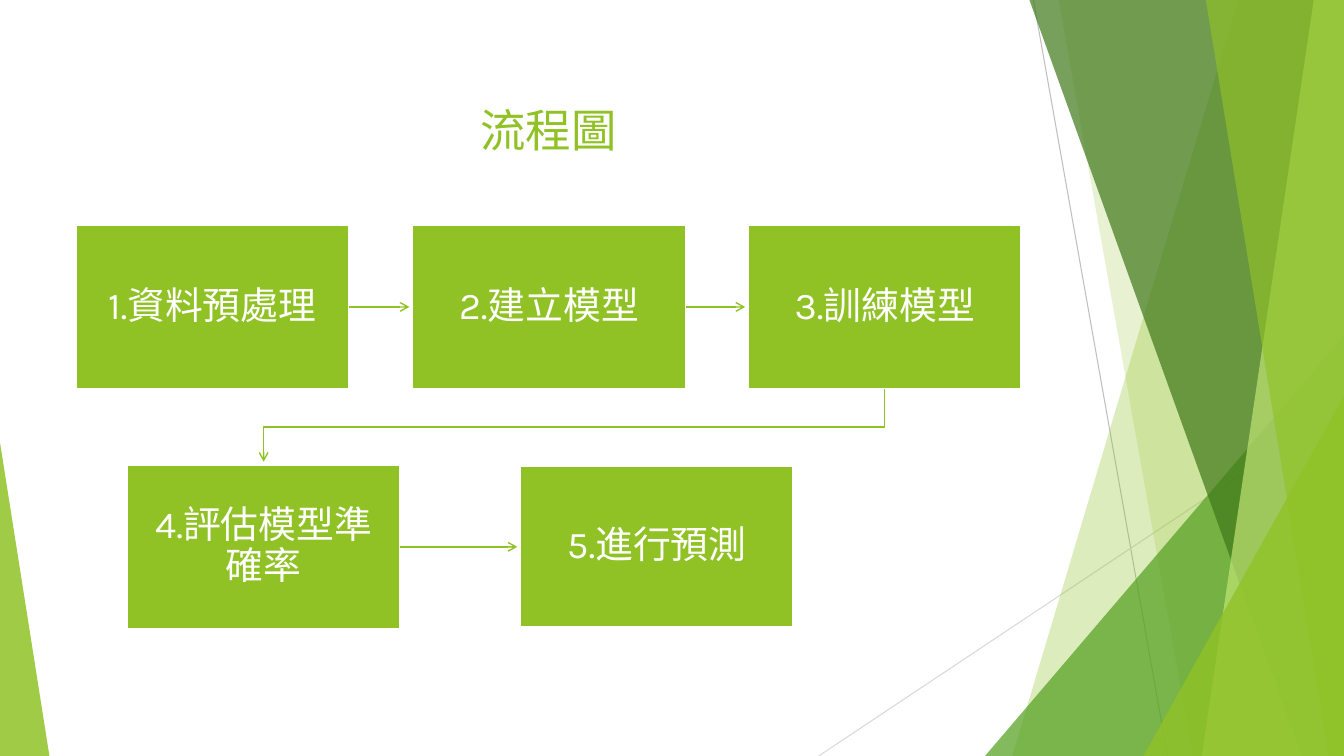
from lxml import etree
from pptx import Presentation
from pptx.dml.color import RGBColor
from pptx.enum.shapes import MSO_CONNECTOR, MSO_SHAPE
from pptx.enum.text import MSO_ANCHOR, PP_ALIGN
from pptx.oxml.ns import qn
from pptx.util import Inches, Pt

STRAIGHT = MSO_CONNECTOR.STRAIGHT
RECTANGLE = MSO_SHAPE.RECTANGLE
TRIANGLE = MSO_SHAPE.ISOSCELES_TRIANGLE
CENTER = PP_ALIGN.CENTER
TOP, MIDDLE = MSO_ANCHOR.TOP, MSO_ANCHOR.MIDDLE

FONT = "Karla"
COLORS = {
    "lime": "90C226",
    "pale lime": "C0E474",
    "green": "54A021",
    "dark green": "3F7819",
    "gray": "BFBFBF",
    "light gray": "D9D9D9",
    "white": "FFFFFF",
}
WIDTH, HEIGHT = 13.33, 7.5

prs = Presentation()
prs.slide_width = Inches(WIDTH)
prs.slide_height = Inches(HEIGHT)
slide = prs.slides.add_slide(prs.slide_layouts[5])
shapes = slide.shapes


def style_line(stroke, color, width, arrow=False):
    stroke.line.color.rgb = RGBColor.from_string(COLORS[color])
    stroke.line.width = Pt(width)
    properties = stroke.element.spPr
    if arrow:
        etree.SubElement(properties.find(qn("a:ln")), qn("a:tailEnd"), type="arrow")
    if properties.find(qn("a:effectLst")) is None:
        etree.SubElement(properties, qn("a:effectLst"))


def draw_path(points, closed):
    corners = [(Inches(x), Inches(y)) for x, y in points]
    builder = shapes.build_freeform(*corners[0], scale=1.0)
    builder.add_line_segments(corners[1:], close=closed)
    outline = builder.convert_to_shape()
    outline.shadow.inherit = False
    return outline


for x1, y1, x2, y2, color in [
    (10.25, 0, 11.58, HEIGHT, "gray"),
    (WIDTH, 4.03, 8.12, HEIGHT, "light gray"),
]:
    ray = shapes.add_connector(STRAIGHT, Inches(x1), Inches(y1), Inches(x2), Inches(y2))
    style_line(ray, color, 0.75)

shards = [
    ("band", (12.28, 10.04), "lime", 30),
    ("band", (10.5, 11.83), "lime", 20),
    ("triangle", (9.77, 3.33, 3.56, 1), "green", 72),
    ("band", (10.21, 12.91), "dark green", 70),
    ("band", (13.03, 11.92), "pale lime", 70),
    ("band", (11.96, 13.18), "lime", 65),
    ("triangle", (11.34, 3.93, 1.99, 1), "lime", 80),
    ("triangle", (0, 4.39, 0.49, 0), "lime", 85),
]
for kind, geometry, color, opacity in shards:
    if kind == "band":
        top_x, bottom_x = geometry
        shard = draw_path(
            [(top_x, 0), (WIDTH, 0), (WIDTH, HEIGHT), (bottom_x, HEIGHT)], True
        )
    else:
        left, top, width, apex = geometry
        shard = shapes.add_shape(
            TRIANGLE, Inches(left), Inches(top), Inches(width), Inches(HEIGHT - top)
        )
        shard.adjustments[0] = apex
        shard.shadow.inherit = False
    shard.fill.solid()
    shard.fill.fore_color.rgb = RGBColor.from_string(COLORS[color])
    shard.line.fill.background()
    tint = shard.element.spPr.find(qn("a:solidFill")).find(qn("a:srgbClr"))
    etree.SubElement(tint, qn("a:alpha"), val=str(opacity * 1000))

title = shapes.title
title.left, title.top = Inches(0.74), Inches(0.96)
title.width, title.height = Inches(9.4), Inches(1.05)
title.text_frame.text = "流程圖"
title.text_frame.vertical_anchor = TOP
heading = title.text_frame.paragraphs[0]
heading.alignment = CENTER
heading.font.name = FONT
heading.font.size = Pt(32.4)
heading.font.color.rgb = RGBColor.from_string(COLORS["lime"])

STEP_WIDTH, ARROW_GAP = 2.71, 0.03
steps = [
    ("1.資料預處理", 0.75, 2.23, 1.63),
    ("2.建立模型", 4.09, 2.23, 1.63),
    ("3.訓練模型", 7.42, 2.23, 1.63),
    ("4.評估模型準確率", 1.26, 4.61, 1.63),
    ("5.進行預測", 5.16, 4.62, 1.6),
]
for label, left, top, height in steps:
    step = shapes.add_shape(
        RECTANGLE, Inches(left), Inches(top), Inches(STEP_WIDTH), Inches(height)
    )
    step.shadow.inherit = False
    step.fill.solid()
    step.fill.fore_color.rgb = RGBColor.from_string(COLORS["lime"])
    style_line(step, "white", 1.5)
    frame = step.text_frame
    frame.word_wrap = True
    frame.vertical_anchor = MIDDLE
    frame.margin_left = frame.margin_right = Inches(0.21)
    frame.margin_top = frame.margin_bottom = Inches(0.21)
    frame.text = label
    caption = frame.paragraphs[0]
    caption.alignment = CENTER
    caption.line_spacing = 0.9
    caption.font.name = FONT
    caption.font.size = Pt(27)
    caption.font.color.rgb = RGBColor.from_string(COLORS["white"])

for (_, left, top, height), (_, next_left, next_top, _) in zip(steps, steps[1:]):
    if next_left > left:
        middle = Inches(top + height / 2)
        arrow = shapes.add_connector(
            STRAIGHT,
            Inches(left + STEP_WIDTH), middle,
            Inches(next_left - ARROW_GAP), middle,
        )
    else:
        start_x = left + STEP_WIDTH / 2
        end_x = next_left + STEP_WIDTH / 2
        bottom = top + height
        bend = (bottom + next_top) / 2
        arrow = draw_path(
            [(start_x, bottom), (start_x, bend), (end_x, bend),
             (end_x, next_top - ARROW_GAP)],
            False,
        )
        arrow.fill.background()
    style_line(arrow, "lime", 1, arrow=True)

prs.save("out.pptx")
